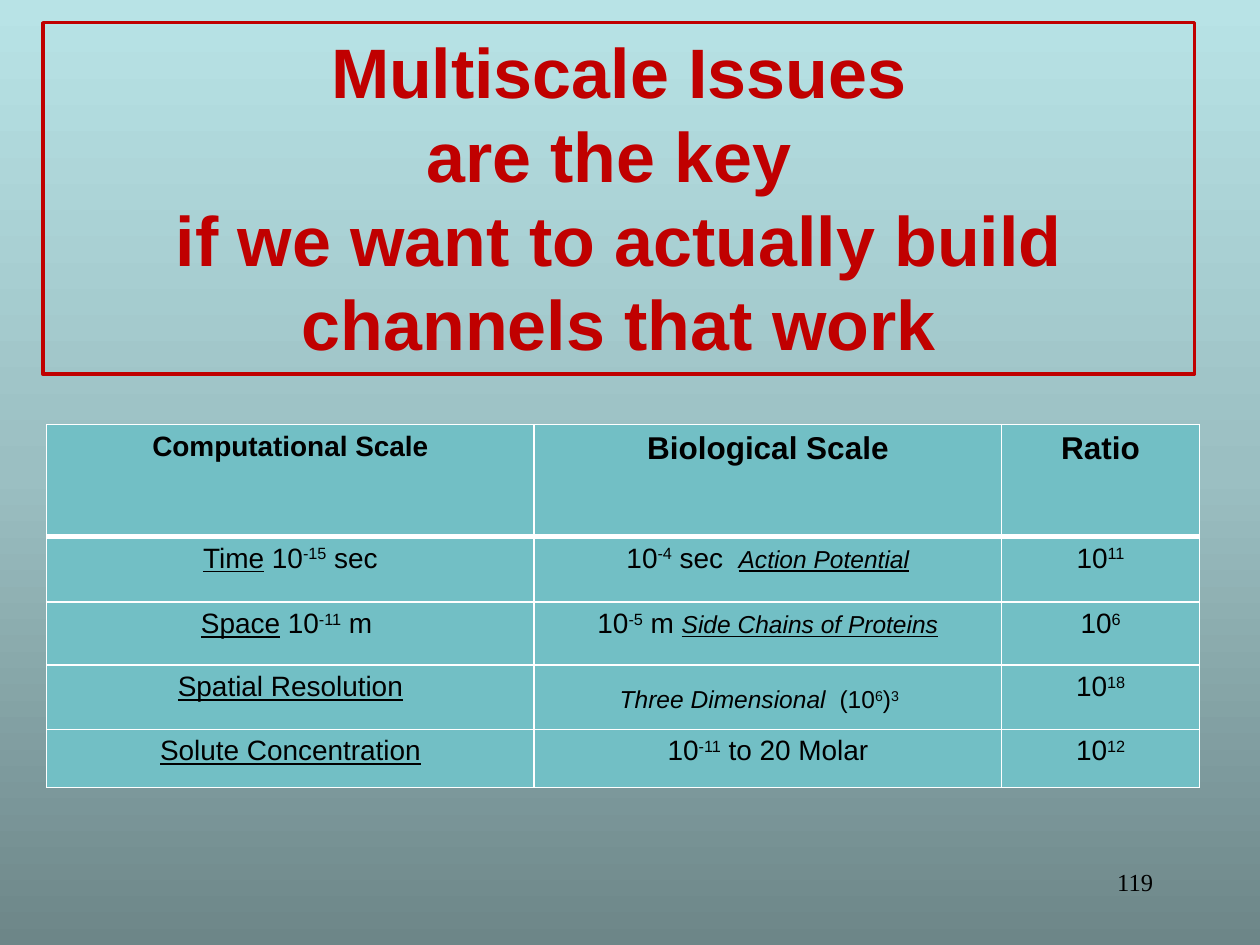
import pptx
import pptx.util
import pptx.dml.color
import pptx.enum.shapes
import pptx.enum.text
import pptx.oxml
import pptx.oxml.ns
from pptx.util import Inches

THEME = {
    "title": {"name": "Arial", "size": 40, "color": "C00000", "bold": True},
    "head_small": {"name": "Arial", "size": 16, "color": "000000", "bold": True},
    "head": {"name": "Arial", "size": 18, "color": "000000", "bold": True},
    "body": {"name": "Arial", "size": 16, "color": "000000"},
    "note": {"name": "Arial", "size": 14, "color": "000000"},
    "number": {"name": "Times New Roman", "size": 14, "color": "000000"},
    "cell": "72BFC5",
    "border": "FFFFFF",
    "background": [(0, "6D8688"), (50, "9BBFC2"), (100, "B8E3E6")],
}

# A run is (text, marks): u underline, i italic, ^ superscript, s small.
TITLE = ["Multiscale Issues", "are the key ",
         "if we want to actually build channels that work"]
HEADER = [("Computational Scale", "head_small"), ("Biological Scale", "head"),
          ("Ratio", "head")]
ROWS = [
    [[("Time", "u"), (" 10", ""), ("-15", "^"), (" sec", "")],
     [("10", ""), ("-4", "^"), (" sec  ", ""), ("Action Potential", "siu")],
     [("10", ""), ("11", "^")]],
    [[("Space", "u"), (" 10", ""), ("-11", "^"), (" m ", "")],
     [("10", ""), ("-5", "^"), (" m ", ""), ("Side Chains of Proteins", "siu")],
     [("10", ""), ("6", "^")]],
    [[("Spatial Resolution", "u")],
     [],
     [("10", ""), ("18", "^")]],
    [[("Solute Concentration", "u")],
     [("10", ""), ("-11", "^"), (" to 20 Molar", "")],
     [("10", ""), ("12", "^")]],
]
VOLUME_NOTE = [("Three Dimensional ", "i"), (" (10", ""), ("6", "^"),
               (")", ""), ("3", "^")]
PAGE_NUMBER = "119"

COL_WIDTHS = [3.87, 3.71, 1.57]
ROW_HEIGHTS = [0.89, 0.52, 0.5, 0.51, 0.46]
ALIGN = pptx.enum.text.PP_ALIGN


def rgb(value):
    return pptx.dml.color.RGBColor.from_string(value)


def add_run(p, text, style, marks=""):
    r = p.add_run()
    r.text = text
    style = THEME["note"] if "s" in marks else THEME[style]
    formats = {"name": style["name"], "size": pptx.util.Pt(style["size"]),
               "bold": style.get("bold", False),
               "italic": "i" in marks, "underline": "u" in marks}
    for key, value in formats.items():
        setattr(r.font, key, value)
    r.font.color.rgb = rgb(style["color"])
    if "^" in marks:
        r.font._element.set("baseline", "30000")


def write_runs(tf, runs, style, align):
    p = tf.paragraphs[0]
    p.alignment = align
    for text, marks in runs:
        add_run(p, text, style, marks)


def set_background(slide):
    """Fill the slide with a gradient that runs from bottom to top."""
    fill = slide.background.fill
    fill.gradient()
    grad = fill._fill._gradFill
    stops = "".join(f'<a:gs pos="{pos * 1000}"><a:srgbClr val="{color}"/></a:gs>'
                    for pos, color in THEME["background"])
    new = pptx.oxml.parse_xml(
        f'<a:gradFill {pptx.oxml.ns.nsdecls("a")} rotWithShape="1">'
        f'<a:gsLst>{stops}</a:gsLst><a:lin ang="16200000" scaled="0"/></a:gradFill>')
    grad.getparent().replace(grad, new)


def set_borders(cell, widths):
    """Draw the cell edges; widths maps L, R, T and B to points."""
    tc_pr = cell._tc.get_or_add_tcPr()
    for i, (side, width) in enumerate(widths.items()):
        tc_pr.insert(i, pptx.oxml.parse_xml(
            f'<a:ln{side} {pptx.oxml.ns.nsdecls("a")} w="{width * 12700}">'
            f'<a:solidFill><a:srgbClr val="{THEME["border"]}"/></a:solidFill>'
            f'</a:ln{side}>'))


def add_title(slide):
    sp = slide.shapes.add_shape(
        pptx.enum.shapes.MSO_SHAPE.RECTANGLE,
        Inches(0.34), Inches(0.18), Inches(9.14), Inches(2.79))
    sp.shadow.inherit = False
    sp.fill.background()
    sp.line.color.rgb = rgb(THEME["title"]["color"])
    sp.line.width = pptx.util.Pt(2)
    tf = sp.text_frame
    tf.word_wrap = True
    tf.vertical_anchor = pptx.enum.text.MSO_ANCHOR.TOP
    p = tf.paragraphs[0]
    p.alignment = ALIGN.CENTER
    for i, line in enumerate(TITLE):
        if i:
            p.add_line_break()
        add_run(p, line, "title")


def add_scale_table(slide):
    table = slide.shapes.add_table(
        len(ROW_HEIGHTS), len(COL_WIDTHS), Inches(0.37), Inches(3.37),
        Inches(sum(COL_WIDTHS)), Inches(sum(ROW_HEIGHTS))).table
    for column, width in zip(table.columns, COL_WIDTHS):
        column.width = Inches(width)
    for row, height in zip(table.rows, ROW_HEIGHTS):
        row.height = Inches(height)
    header = [([(text, "")], style) for text, style in HEADER]
    body = [[(runs, "body") for runs in row] for row in ROWS]
    for i, row in enumerate([header] + body):
        for j, (runs, style) in enumerate(row):
            cell = table.cell(i, j)
            cell.fill.solid()
            cell.fill.fore_color.rgb = rgb(THEME["cell"])
            set_borders(cell, {"L": 1, "R": 1, "T": 3 if i == 1 else 1,
                               "B": 3 if i == 0 else 1})
            write_runs(cell.text_frame, runs, style, ALIGN.CENTER)


def add_text(slide, box, runs, style, align):
    tf = slide.shapes.add_textbox(*map(Inches, box)).text_frame
    tf.word_wrap = True
    write_runs(tf, runs, style, align)


def main():
    prs = pptx.Presentation()
    prs.slide_width, prs.slide_height = Inches(10), Inches(7.5)
    slide = prs.slides.add_slide(prs.slide_layouts[6])
    set_background(slide)
    add_text(slide, (7.17, 6.83, 2.08, 0.5), [(PAGE_NUMBER, "")], "number", ALIGN.RIGHT)
    add_title(slide)
    add_scale_table(slide)
    add_text(slide, (4.82, 5.38, 2.62, 0.34), VOLUME_NOTE, "note", ALIGN.LEFT)
    prs.save("out.pptx")


if __name__ == "__main__":
    main()
